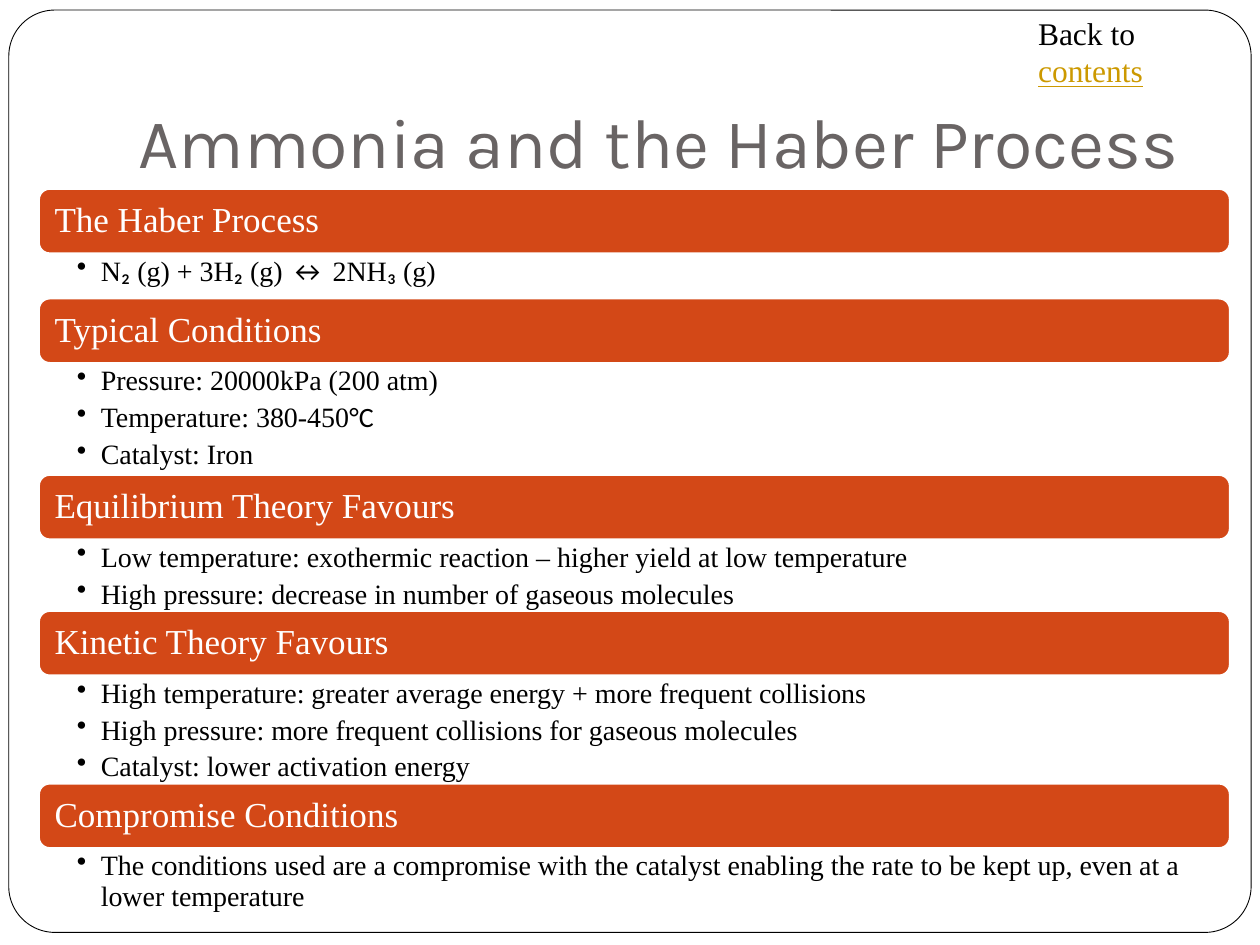
from lxml import etree
from pptx import Presentation
from pptx.dml.color import RGBColor
from pptx.enum.shapes import MSO_SHAPE
from pptx.enum.text import MSO_ANCHOR, MSO_AUTO_SIZE, PP_ALIGN
from pptx.oxml.ns import qn
from pptx.util import Inches, Pt

ROUNDED = MSO_SHAPE.ROUNDED_RECTANGLE
MIDDLE, BOTTOM, TOP = MSO_ANCHOR.MIDDLE, MSO_ANCHOR.BOTTOM, MSO_ANCHOR.TOP
LEFT = PP_ALIGN.LEFT
NO_RESIZE = MSO_AUTO_SIZE.NONE

WHITE = RGBColor(0xFF, 0xFF, 0xFF)
BLACK = RGBColor(0x00, 0x00, 0x00)
ORANGE = RGBColor(0xD3, 0x48, 0x17)
GREY = RGBColor(0x69, 0x64, 0x64)
GOLD = RGBColor(0xCC, 0x99, 0x00)

SERIF, SYMBOL, DISPLAY = "Times New Roman", "Calibri", "Karla"

SECTION_LEFT, SECTION_TOP, SECTION_WIDTH = 0.31, 1.5, 9.45
BAR_HEIGHT = 0.51

# Each section: heading, body height, points; odd pieces of a point use the symbol font.
SECTIONS = [
    ("The Haber Process", 0.36, [
        ("N", "₂", " (g) + 3H", "₂", " (g) ", "↔", " 2NH", "₃", " (g)"),
    ]),
    ("Typical Conditions", 0.89, [
        ("Pressure: 20000kPa (200 atm)",),
        ("Temperature: 380-450", "°C"),
        ("Catalyst: Iron",),
    ]),
    ("Equilibrium Theory Favours", 0.57, [
        ("Low temperature: exothermic reaction – higher yield at low temperature",),
        ("High pressure: decrease in number of gaseous molecules",),
    ]),
    ("Kinetic Theory Favours", 0.86, [
        ("High temperature: greater average energy + more frequent collisions",),
        ("High pressure: more frequent collisions for gaseous molecules",),
        ("Catalyst: lower activation energy",),
    ]),
    ("Compromise Conditions", 0.52, [
        ("The conditions used are a compromise with the catalyst enabling the rate "
         "to be kept up, even at a lower temperature",),
    ]),
]


def style_font(font, name, size, color):
    """Set the typeface, point size and colour of a font."""
    font.name = name
    font.size = Pt(size)
    font.color.rgb = color


def set_frame(frame, anchor, left, top, right, bottom):
    """Wrap a text frame and set its anchor and insets in inches."""
    frame.word_wrap = True
    frame.auto_size = NO_RESIZE
    frame.vertical_anchor = anchor
    frame.margin_left, frame.margin_top = Inches(left), Inches(top)
    frame.margin_right, frame.margin_bottom = Inches(right), Inches(bottom)


def add_rounded(page, left, top, width, height, fill, line, line_width):
    """Add a flat rounded rectangle."""
    shape = page.shapes.add_shape(
        ROUNDED, Inches(left), Inches(top), Inches(width), Inches(height))
    shape.shadow.inherit = False
    shape.fill.solid()
    shape.fill.fore_color.rgb = fill
    shape.line.color.rgb = line
    shape.line.width = Pt(line_width)
    return shape


def add_text_box(page, left, top, width, height):
    """Add an empty text box."""
    return page.shapes.add_textbox(
        Inches(left), Inches(top), Inches(width), Inches(height))


def add_title(page, text):
    """Place and format the title placeholder."""
    title = page.shapes.title
    title.left, title.top = Inches(1), Inches(0.3)
    title.width, title.height = Inches(8.5), Inches(1.25)
    frame = title.text_frame
    set_frame(frame, BOTTOM, 0.1, 0.05, 0.1, 0.1)
    frame.text = text
    para = frame.paragraphs[0]
    para.alignment = LEFT
    style_font(para.runs[0].font, DISPLAY, 40, GREY)


def add_bar(page, top, heading):
    """Add a coloured section bar with its heading."""
    bar = add_rounded(
        page, SECTION_LEFT, top, SECTION_WIDTH, BAR_HEIGHT, ORANGE, WHITE, 1)
    frame = bar.text_frame
    set_frame(frame, MIDDLE, 0.1, 0.08, 0.1, 0.08)
    frame.text = heading
    para = frame.paragraphs[0]
    para.alignment = LEFT
    para.line_spacing = 0.9
    style_font(para.runs[0].font, SERIF, 20, WHITE)


def set_bullet(para):
    """Give a paragraph a hanging round bullet."""
    properties = para._p.get_or_add_pPr()
    properties.set("marL", str(Inches(0.19)))
    properties.set("indent", str(-Inches(0.19)))
    etree.SubElement(properties, qn("a:buChar"), char="•")


def add_points(page, top, height, points):
    """Add the bulleted points below a section bar."""
    box = add_text_box(page, SECTION_LEFT, top, SECTION_WIDTH, height)
    frame = box.text_frame
    set_frame(frame, TOP, 0.3, 0.03, 0.16, 0.03)
    for index, pieces in enumerate(points):
        para = frame.add_paragraph() if index else frame.paragraphs[0]
        para.line_spacing = 0.9
        para.space_after = Pt(3.8)
        set_bullet(para)
        for position, piece in enumerate(pieces):
            span = para.add_run()
            span.text = piece
            style_font(span.font, SYMBOL if position % 2 else SERIF, 16, BLACK)


def add_back_note(page):
    """Add the navigation note in the top right corner."""
    box = add_text_box(page, 8.14, 0.06, 1.71, 0.4)
    box.text_frame.word_wrap = True
    para = box.text_frame.paragraphs[0]
    for text, color in (("Back to ", BLACK), ("contents", GOLD)):
        span = para.add_run()
        span.text = text
        style_font(span.font, SERIF, 18, color)
    para.runs[-1].font.underline = True


def main():
    """Build the slide and save the deck."""
    deck = Presentation()
    deck.slide_width, deck.slide_height = Inches(10), Inches(7.5)
    page = deck.slides.add_slide(deck.slide_layouts[5])
    border = add_rounded(page, 0.07, 0.08, 9.86, 7.32, WHITE, BLACK, 0.5)
    border.adjustments[0] = 0.05
    page.shapes._spTree.insert(2, border._element)
    add_title(page, "Ammonia and the Haber Process")
    top = SECTION_TOP
    for heading, height, points in SECTIONS:
        add_bar(page, top, heading)
        add_points(page, top + BAR_HEIGHT, height, points)
        top += BAR_HEIGHT + height
    add_back_note(page)
    deck.save("out.pptx")


if __name__ == "__main__":
    main()
